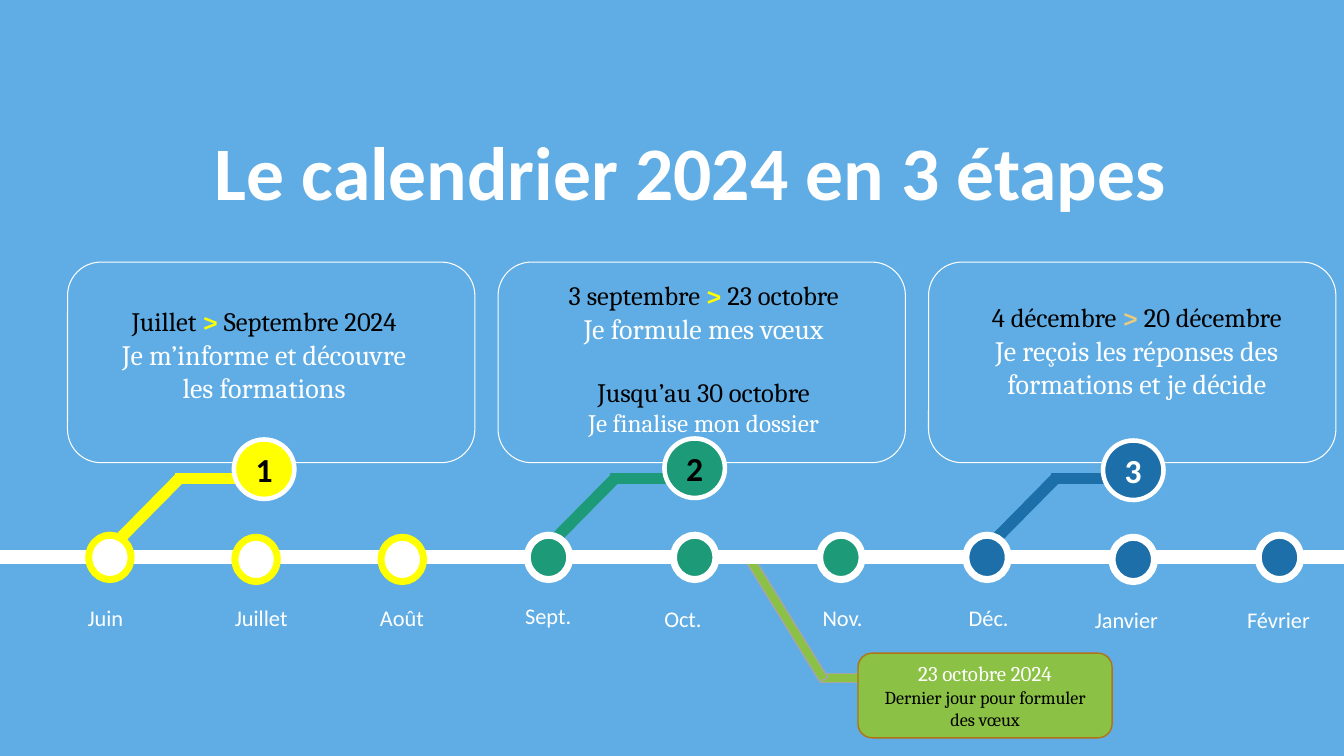
from pptx import Presentation
from pptx.dml.color import RGBColor
from pptx.enum.shapes import MSO_SHAPE
from pptx.enum.text import MSO_ANCHOR, MSO_AUTO_SIZE, PP_ALIGN
from pptx.util import Inches, Pt

WHITE, BLACK, YELLOW = "FFFFFF", "000000", "FFFF00"
TEAL, BLUE, LIME, SAND = "1D9A78", "1D6FA9", "8BC145", "E9CA80"


def color(hex_value):
    return RGBColor.from_string(hex_value)


presentation = Presentation()
presentation.slide_width, presentation.slide_height = Inches(13.33), Inches(7.5)
slide = presentation.slides.add_slide(presentation.slide_layouts[5])
slide.background.fill.solid()
slide.background.fill.fore_color.rgb = color("5FADE4")


def add_shape(kind, box, fill, line, width, rotation=0):
    shape = slide.shapes.add_shape(kind, *map(Inches, box))
    shape.shadow.inherit = False
    shape.rotation = rotation
    if fill:
        shape.fill.solid()
        shape.fill.fore_color.rgb = color(fill)
    else:
        shape.fill.background()
    shape.line.color.rgb = color(line)
    shape.line.width = Pt(width)
    return shape


def add_runs(paragraph, runs, font_name, alignment=PP_ALIGN.CENTER):
    paragraph.alignment = alignment
    for text, size, hex_value, bold in runs:
        if text == "\n":
            paragraph.add_line_break()
            continue
        run = paragraph.add_run()
        run.text = text
        run.font.name = font_name
        run.font.size = Pt(size)
        run.font.bold = bold
        run.font.color.rgb = color(hex_value)


# Title
title = slide.shapes.title
title.left, title.top, title.width, title.height = map(Inches, (1.85, 1.26, 10, 0.98))
title.text_frame.auto_size = MSO_AUTO_SIZE.NONE
title.text_frame.vertical_anchor = MSO_ANCHOR.MIDDLE
title.text_frame.paragraphs[0].line_spacing = 0.9
add_runs(title.text_frame.paragraphs[0],
         [("Le calendrier 2024 en 3 étapes", 54, WHITE, True)], "Calibri")

# Bent bars linking the timeline to the deadline and to the steps
add_shape(MSO_SHAPE.RECTANGLE, (8.13, 6.68, 1.38, 0.09), LIME, "A6A6A6", 1)
add_shape(MSO_SHAPE.RECTANGLE, (7.12, 6.11, 1.38, 0.09), LIME, "A6A6A6", 1, 58.4)
for left, fill in [(1.04, YELLOW), (5.36, TEAL), (9.73, BLUE)]:
    add_shape(MSO_SHAPE.RECTANGLE, (left, 5, 0.88, 0.1), fill, fill, 1, 314.6)
    add_shape(MSO_SHAPE.RECTANGLE, (left + 0.7, 4.7, 0.83, 0.1), fill, fill, 1)

# Timeline and step frames
add_shape(MSO_SHAPE.RECTANGLE, (0, 5.46, 13.33, 0.13), WHITE, WHITE, 1)
for index in range(3):
    add_shape(MSO_SHAPE.ROUNDED_RECTANGLE, (0.67 + 4.27 * index, 2.6, 4.04, 1.99),
              None, WHITE, 0.75)

# Months: name, dot top, label left, label top, label width
months = [
    ("Juin", 5.31, 0.77, 5.94, 0.67),
    ("Juillet", 5.33, 2.23, 5.94, 0.81),
    ("Août", 5.33, 3.67, 5.94, 0.81),
    ("Sept.", 5.31, 5.11, 5.92, 0.81),
    ("Oct.", 5.31, 6.49, 5.95, 0.94),
    ("Nov.", 5.31, 8.06, 5.94, 0.75),
    ("Déc.", 5.31, 9.51, 5.94, 0.74),
    ("Janvier", 5.33, 10.76, 5.96, 1.04),
    ("Février", 5.31, 12.27, 5.96, 0.9),
]
dot_colors = [(WHITE, YELLOW), (TEAL, WHITE), (BLUE, WHITE)]
for index, (month, dot_top, left, top, width) in enumerate(months):
    fill, line = dot_colors[index // 3]
    add_shape(MSO_SHAPE.OVAL, (0.88 + 1.45 * index, dot_top, 0.42, 0.44), fill, line, 5)
    label = slide.shapes.add_textbox(*map(Inches, (left, top, width, 0.37)))
    label.text_frame.word_wrap = True
    add_runs(label.text_frame.paragraphs[0], [(month, 16, WHITE, False)],
             "Calibri", PP_ALIGN.LEFT)

# Numbered badges
badges = [
    ("1", 2.32, 4.36, YELLOW, BLACK),
    ("2", 6.59, 4.35, TEAL, BLACK),
    ("3", 10.94, 4.37, BLUE, WHITE),
]
for number, left, top, fill, text_color in badges:
    badge = add_shape(MSO_SHAPE.OVAL, (left, top, 0.6, 0.59), fill, WHITE, 3.25)
    badge.text_frame.vertical_anchor = MSO_ANCHOR.MIDDLE
    add_runs(badge.text_frame.paragraphs[0], [(number, 24, text_color, True)], "Calibri")

# Step texts: box, start, arrow colour, end, action
steps = [
    ((0.94, 2.98, 3.36, 1.11), "Juillet ", YELLOW, " Septembre 2024",
     "Je m’informe et découvre les formations"),
    ((5.15, 2.72, 3.66, 1.68), "3 septembre ", YELLOW, " 23 octobre",
     "Je formule mes vœux"),
    ((9.58, 2.94, 3.39, 1.09), "4 décembre ", SAND, " 20 décembre",
     "Je reçois les réponses des formations et je décide"),
]
step_frames = []
for box, start, arrow_color, end, action in steps:
    frame = slide.shapes.add_textbox(*map(Inches, box)).text_frame
    frame.word_wrap = True
    add_runs(frame.paragraphs[0], [
        (start, 19, BLACK, False), (">", 19, arrow_color, True), (end, 19, BLACK, False),
        ("\n", 19, BLACK, False), (action, 20, WHITE, False)], "Cambria")
    step_frames.append(frame)

# Second part of step 2
extension = step_frames[1].add_paragraph()
extension.space_before = Pt(22)
add_runs(extension, [("Jusqu’au 30 octobre", 19, BLACK, False)], "Cambria")
add_runs(step_frames[1].add_paragraph(),
         [("Je finalise mon dossier", 18, WHITE, False)], "Cambria")

# Deadline
deadline = add_shape(MSO_SHAPE.ROUNDED_RECTANGLE, (8.51, 6.48, 2.52, 0.84),
                     LIME, "B27412", 1).text_frame
deadline.word_wrap = True
deadline.vertical_anchor = MSO_ANCHOR.MIDDLE
add_runs(deadline.paragraphs[0], [("23 octobre 2024", 15, WHITE, False)], "Cambria")
add_runs(deadline.add_paragraph(),
         [("Dernier jour pour formuler des vœux", 13, BLACK, False)], "Cambria")

presentation.save("out.pptx")
